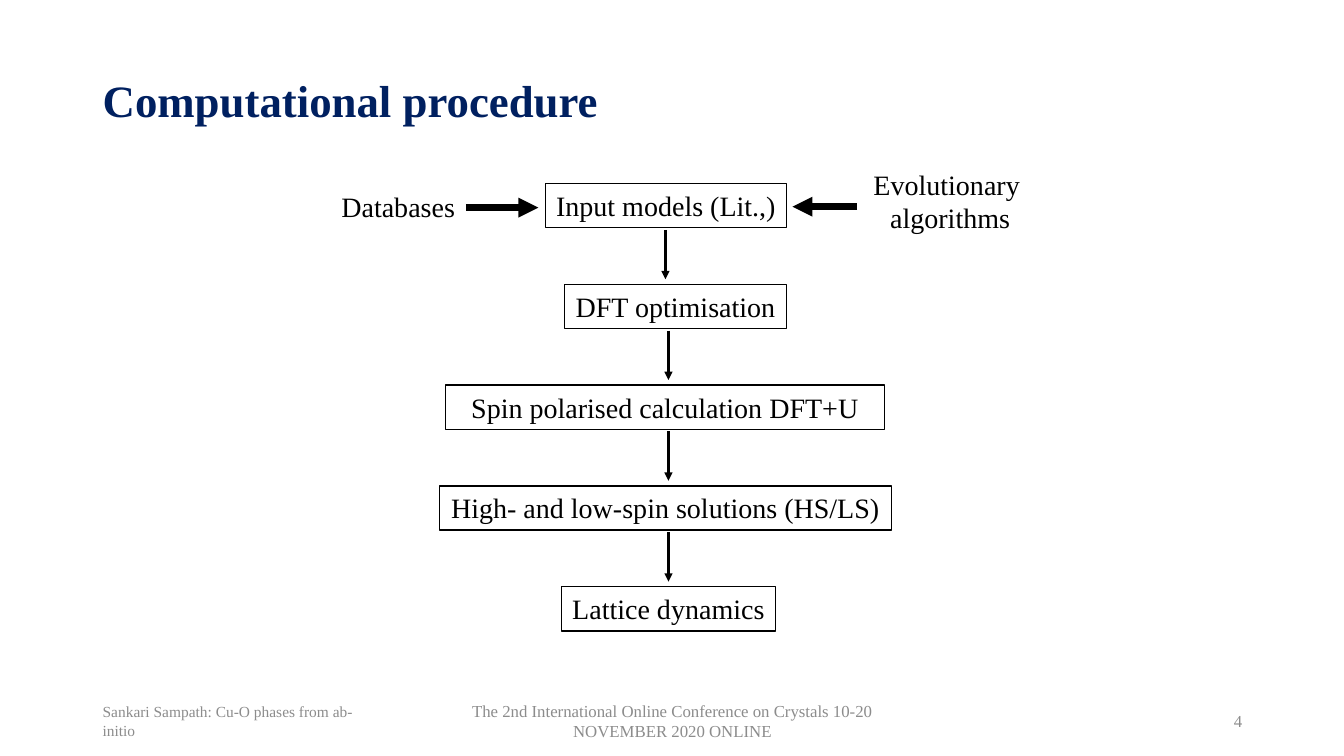
from lxml.etree import SubElement
from pptx import Presentation
from pptx.dml.color import RGBColor
from pptx.enum.shapes import MSO_CONNECTOR as Connector, MSO_SHAPE as Shape
from pptx.enum.text import MSO_ANCHOR as Anchor, PP_ALIGN as Align
from pptx.oxml.ns import qn
from pptx.util import Pt

FONT = "Times New Roman"
BLACK, WHITE, NAVY, GREY = "000000", "FFFFFF", "002060", "8C8C8C"
PX = 9144

TITLE = ("Computational procedure", (92, 20, 1150, 165))
FOOTERS = [
    ("Sankari Sampath: Cu-O phases from ab-initio", 92, 300, 11, Align.LEFT),
    ("The 2nd International Online Conference on Crystals 10-20 NOVEMBER 2020 ONLINE",
     442, 450, 12, Align.CENTER),
    ("4", 942, 300, 12, Align.RIGHT),
]
FOOTER_TOP, FOOTER_HEIGHT = 695, 40

STEPS = [
    ("Input models (Lit.,)", 541, 239),
    ("DFT optimisation", 560, 220),
    ("Spin polarised calculation DFT+U", 442, 435),
    ("High- and low-spin solutions (HS/LS)", 436, 448),
    ("Lattice dynamics", 557, 212),
]
STEP_TOP, STEP_PITCH, STEP_HEIGHT = 182, 100, 44
STEP_ARROW_X = [660, 663, 663, 663]
ARROW_GAP, ARROW_LENGTH = 2, 49

SOURCES = [
    ("Databases", (328, 183, 134, 44), (462, 206, 534, 206)),
    ("Evolutionary\n algorithms", (856, 161, 166, 77), (850, 205, 786, 205)),
]


def px(*lengths):
    return [length * PX for length in lengths]


def color(value):
    return RGBColor.from_string(value)


def set_text(shape, text, size, ink, align=Align.CENTER, anchor=Anchor.TOP,
             wrap=False, bold=False, spacing=None):
    frame = shape.text_frame
    frame.text = text
    frame.word_wrap = wrap
    frame.vertical_anchor = anchor
    for paragraph in frame.paragraphs:
        paragraph.alignment = align
        paragraph.line_spacing = spacing
        for run in paragraph.runs:
            run.font.name = FONT
            run.font.size = Pt(size)
            run.font.bold = bold
            run.font.color.rgb = color(ink)


def add_text(slide, box, text, size, ink, **options):
    set_text(slide.shapes.add_textbox(*px(*box)), text, size, ink, **options)


def add_step(slide, box, text):
    shape = slide.shapes.add_shape(Shape.RECTANGLE, *px(*box))
    shape.shadow.inherit = False
    shape.fill.solid()
    shape.fill.fore_color.rgb = color(WHITE)
    shape.line.color.rgb = color(BLACK)
    shape.line.width = Pt(1)
    set_text(shape, text, 20, BLACK)


def add_arrow(slide, ends, width):
    arrow = slide.shapes.add_connector(Connector.STRAIGHT, *px(*ends))
    arrow.line.color.rgb = color(BLACK)
    arrow.line.width = Pt(width)
    properties = arrow._element.spPr
    SubElement(properties.find(qn("a:ln")), qn("a:tailEnd"), type="triangle")
    SubElement(properties, qn("a:effectLst"))


def main():
    presentation = Presentation()
    presentation.slide_width, presentation.slide_height = px(1333, 750)
    slide = presentation.slides.add_slide(presentation.slide_layouts[6])

    title, title_box = TITLE
    add_text(slide, title_box, title, 32, NAVY, align=Align.LEFT,
             anchor=Anchor.MIDDLE, wrap=True, bold=True, spacing=0.9)

    for text, left, width, size, align in FOOTERS:
        add_text(slide, (left, FOOTER_TOP, width, FOOTER_HEIGHT), text, size, GREY,
                 align=align, anchor=Anchor.MIDDLE, wrap=True)

    for index, (text, left, width) in enumerate(STEPS):
        top = STEP_TOP + index * STEP_PITCH
        add_step(slide, (left, top, width, STEP_HEIGHT), text)

    for index, x in enumerate(STEP_ARROW_X):
        start = STEP_TOP + index * STEP_PITCH + STEP_HEIGHT + ARROW_GAP
        add_arrow(slide, (x, start, x, start + ARROW_LENGTH), 1.5)

    for text, box, ends in SOURCES:
        add_text(slide, box, text, 20, BLACK)
        add_arrow(slide, ends, 4.75)

    presentation.save("out.pptx")


if __name__ == "__main__":
    main()
